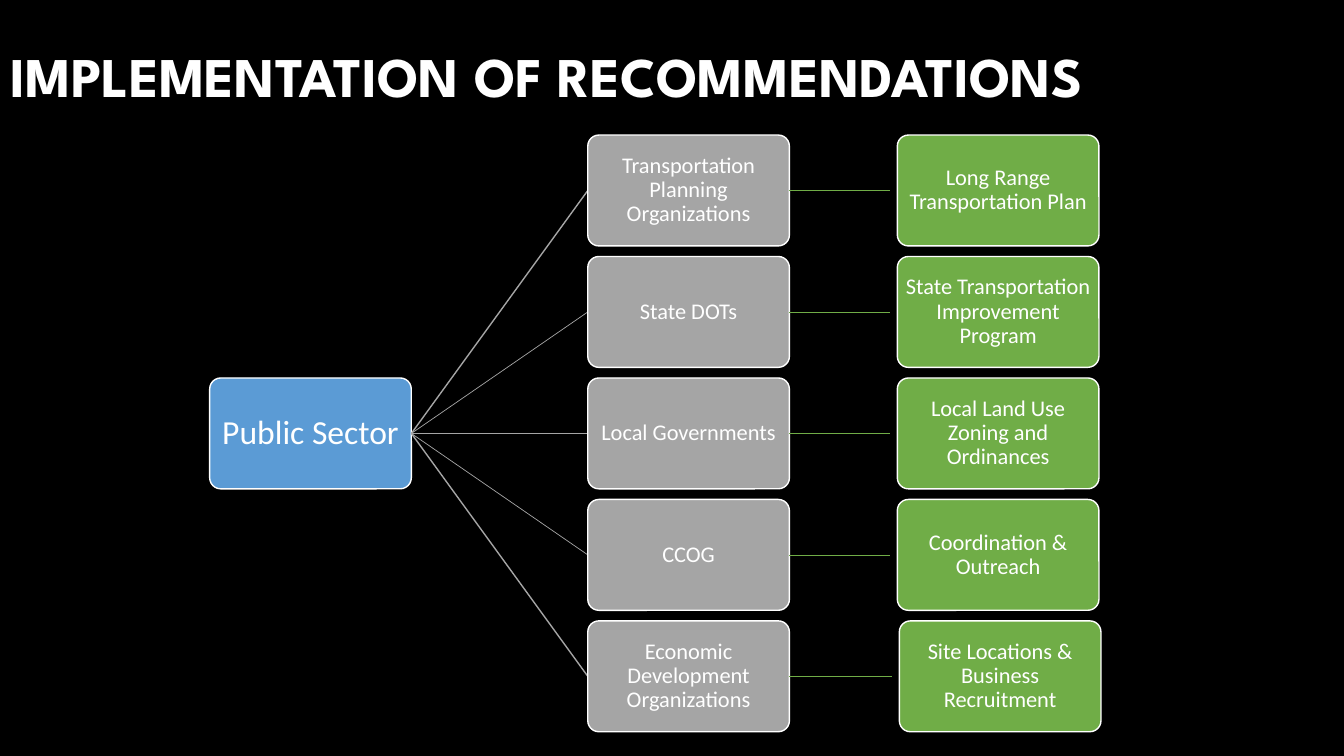
from pptx import Presentation
from pptx.dml.color import RGBColor
from pptx.enum.shapes import MSO_CONNECTOR, MSO_SHAPE
from pptx.enum.text import MSO_ANCHOR, MSO_AUTO_SIZE, PP_ALIGN
from pptx.oxml.ns import qn
from pptx.util import Inches, Pt

COLORS = {"black": "000000", "white": "FFFFFF", "blue": "5B9BD5",
          "gray": "A5A5A5", "green": "70AD47"}
BOX_W, BOX_H = 2.0, 1.1
ROW_PITCH = 1.205
LINE_END_GAP = 0.07
ROOT_X, AGENCY_X, ACTION_X = 0, 3.75, 6.82
ROWS = [
    ("Transportation Planning Organizations", "Long Range Transportation Plan", 1, 0),
    ("State DOTs", "State Transportation Improvement Program", 0.5, 0),
    ("Local Governments", "Local Land Use Zoning and Ordinances", 1, 0),
    ("CCOG", "Coordination & Outreach", 0.5, 0),
    ("Economic Development Organizations", "Site Locations & Business Recruitment", 1, 0.02),
]


def rgb(name):
    """Return the named palette colour."""
    return RGBColor.from_string(COLORS[name])


def write_text(tf, text, size, font="Calibri", bold=False,
               align=PP_ALIGN.CENTER, spacing=0.9, inset=0.01):
    """Write one formatted white paragraph, centred vertically."""
    tf.word_wrap = True
    tf.auto_size = MSO_AUTO_SIZE.NONE
    tf.vertical_anchor = MSO_ANCHOR.MIDDLE
    tf.margin_left = tf.margin_right = Inches(inset)
    tf.margin_top = tf.margin_bottom = Inches(inset)
    p = tf.paragraphs[0]
    p.alignment = align
    p.line_spacing = spacing
    r = p.add_run()
    r.text = text
    r.font.size = Pt(size)
    r.font.name = font
    r.font.bold = bold
    r.font.color.rgb = rgb("white")


def add_box(slide, left, top, text, color, size=16, inset=0.01):
    """Add a rounded box with its label."""
    sp = slide.shapes.add_shape(MSO_SHAPE.ROUNDED_RECTANGLE, Inches(left),
                                Inches(top), Inches(BOX_W), Inches(BOX_H))
    sp.adjustments[0] = 0.1
    sp.shadow.inherit = False
    sp.fill.solid()
    sp.fill.fore_color.rgb = rgb(color)
    sp.line.color.rgb = rgb("white")
    sp.line.width = Pt(1)
    write_text(sp.text_frame, text, size, inset=inset)
    return sp


def add_line(slide, x1, y1, x2, y2, color, width):
    """Add a straight line without a shadow."""
    line = slide.shapes.add_connector(MSO_CONNECTOR.STRAIGHT, Inches(x1),
                                      Inches(y1), Inches(x2), Inches(y2))
    line.line.color.rgb = rgb(color)
    line.line.width = Pt(width)
    sp_pr = line._element.spPr
    sp_pr.append(sp_pr.makeelement(qn("a:effectLst"), {}))


def add_title(slide, left, top, width, height):
    """Place and fill the title placeholder."""
    title = slide.shapes.title
    title.left, title.top = Inches(left), Inches(top)
    title.width, title.height = Inches(width), Inches(height)
    write_text(title.text_frame, "IMPLEMENTATION OF RECOMMENDATIONS", 40,
               font="League Spartan", bold=True, align=PP_ALIGN.LEFT, inset=0.1)


def add_tree(slide, left, top):
    """Draw the public sector tree from its top left corner."""
    root_top = top + ROW_PITCH * (len(ROWS) // 2)
    root_right, root_mid = left + ROOT_X + BOX_W, root_top + BOX_H / 2
    agency_left, action_left = left + AGENCY_X, left + ACTION_X
    add_box(slide, left + ROOT_X, root_top, "Public Sector", "blue", size=24, inset=0.02)
    for i, (agency, action, width, shift) in enumerate(ROWS):
        row_top = top + i * ROW_PITCH
        mid = row_top + BOX_H / 2
        action_x = action_left + shift
        add_line(slide, root_right, root_mid, agency_left, mid, "gray", width)
        add_box(slide, agency_left, row_top, agency, "gray")
        add_line(slide, agency_left + BOX_W, mid, action_x - LINE_END_GAP, mid,
                 "green", 0.5)
        add_box(slide, action_x, row_top, action, "green")


def main():
    """Build and save the slide."""
    prs = Presentation()
    prs.slide_width, prs.slide_height = Inches(13.33), Inches(7.5)
    slide = prs.slides.add_slide(prs.slide_layouts[5])
    slide.background.fill.solid()
    slide.background.fill.fore_color.rgb = rgb("black")
    add_title(slide, 0, 0, 11.96, 1.57)
    add_tree(slide, 2.08, 1.34)
    prs.save("out.pptx")


if __name__ == "__main__":
    main()
